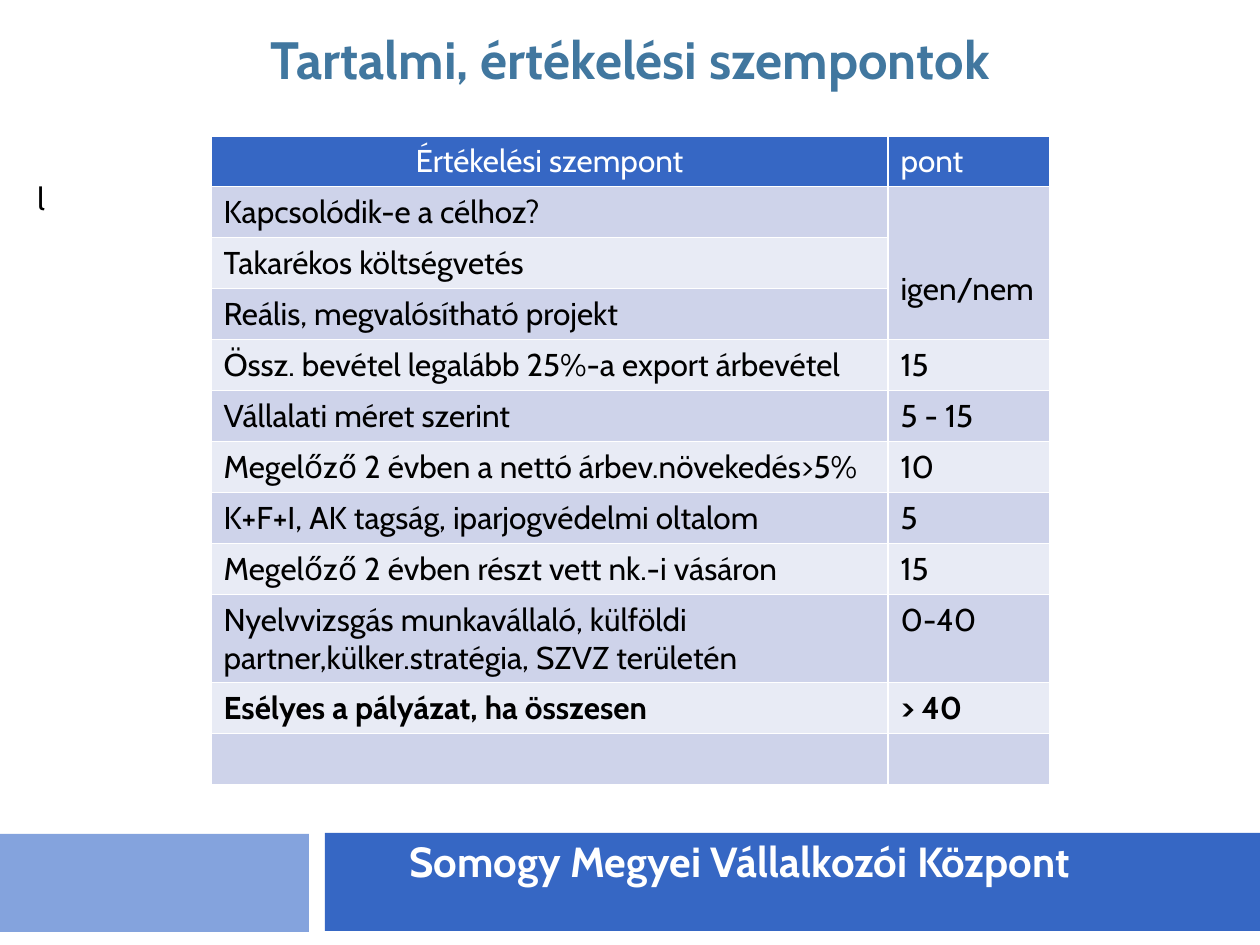
from dataclasses import dataclass
from typing import NamedTuple

from lxml.etree import SubElement
from pptx import Presentation
from pptx.dml.color import RGBColor
from pptx.enum.shapes import MSO_SHAPE
from pptx.enum.text import MSO_ANCHOR, MSO_AUTO_SIZE, PP_ALIGN
from pptx.oxml.ns import qn
from pptx.util import Emu, Pt

PX_PER_INCH = 126


@dataclass(frozen=True)
class Theme:
    font: str = "Cabin"
    title: str = "41779F"
    primary: str = "3667C4"
    accent: str = "84A3DD"
    bands: tuple = ("CED3EA", "E8EBF5")
    light: str = "FFFFFF"
    dark: str = "000000"
    title_size: int = 30
    footer_size: int = 24
    body_size: int = 18
    border: int = 1


class Area(NamedTuple):
    left: int
    top: int
    width: int
    height: int


class Criterion(NamedTuple):
    name: str
    points: str
    height: int = 51
    bold: bool = False


THEME = Theme()
HEADER = Criterion("Értékelési szempont", "pont", 50)
CRITERIA = [
    Criterion("Kapcsolódik-e a célhoz?", "igen/nem"),
    Criterion("Takarékos költségvetés", ""),
    Criterion("Reális, megvalósítható projekt", ""),
    Criterion("Össz. bevétel legalább 25%-a export árbevétel", "15"),
    Criterion("Vállalati méret szerint", "5 - 15"),
    Criterion("Megelőző 2 évben a nettó árbev.növekedés>5%", "10"),
    Criterion("K+F+I, AK tagság, iparjogvédelmi oltalom", "5"),
    Criterion("Megelőző 2 évben részt vett nk.-i vásáron", "15"),
    Criterion("Nyelvvizsgás munkavállaló, külföldi "
              "partner,külker.stratégia, SZVZ területén", "0-40", 88),
    Criterion("Esélyes a pályázat, ha összesen", "> 40", bold=True),
    Criterion("", ""),
]
COLUMN_WIDTHS = (677, 162)
BARS = [
    (Area(-1, 834, 310, 98), THEME.accent),
    (Area(325, 833, 935, 98), THEME.primary),
]


def px(value: int) -> Emu:
    return Emu(round(value * 914400 / PX_PER_INCH))


def place(shape, area: Area) -> None:
    for name, value in area._asdict().items():
        setattr(shape, name, px(value))


def write(frame, text: str, color: str, size: int, bold: bool = False,
          align=PP_ALIGN.LEFT) -> None:
    para = frame.paragraphs[0]
    para.alignment = align
    # An empty cell keeps its type size on the paragraph end
    span = para.add_run() if text else para
    span.text = text
    formats = {"name": THEME.font, "size": Pt(size), "bold": bold}
    for name, value in formats.items():
        setattr(span.font, name, value)
    span.font.color.rgb = RGBColor.from_string(color)


def add_bar(page, area: Area, color: str) -> None:
    bar = page.shapes.add_shape(MSO_SHAPE.RECTANGLE, *map(px, area))
    bar.shadow.inherit = False
    bar.fill.solid()
    bar.fill.fore_color.rgb = RGBColor.from_string(color)
    bar.line.fill.background()


def add_label(page, area: Area, text: str, color: str, size: int,
              bold: bool = False) -> None:
    box = page.shapes.add_textbox(*map(px, area))
    box.text_frame.word_wrap = True
    write(box.text_frame, text, color, size, bold)


def style_cell(cell, fill: str) -> None:
    properties = cell._tc.get_or_add_tcPr()
    for side in ("a:lnL", "a:lnR", "a:lnT", "a:lnB"):
        line = SubElement(properties, qn(side), w=str(Pt(THEME.border)))
        paint = SubElement(line, qn("a:solidFill"))
        SubElement(paint, qn("a:srgbClr"), val=THEME.light)
    cell.fill.solid()
    cell.fill.fore_color.rgb = RGBColor.from_string(fill)


def add_criteria_table(page, left: int, top: int) -> None:
    rows = [HEADER, *CRITERIA]
    area = Area(left, top, sum(COLUMN_WIDTHS), sum(row.height for row in rows))
    table = page.shapes.add_table(len(rows), len(COLUMN_WIDTHS), *map(px, area)).table
    table.first_row = table.horz_banding = False
    for column, width in zip(table.columns, COLUMN_WIDTHS):
        column.width = px(width)

    for index, row in enumerate(rows):
        is_header = index == 0
        fill = THEME.primary if is_header else THEME.bands[(index - 1) % 2]
        color = THEME.light if is_header else THEME.dark
        table.rows[index].height = px(row.height)
        for column, text in enumerate((row.name, row.points)):
            cell = table.cell(index, column)
            style_cell(cell, fill)
            centered = is_header and column == 0
            write(cell.text_frame, text, color, THEME.body_size, row.bold,
                  PP_ALIGN.CENTER if centered else PP_ALIGN.LEFT)

    # One yes/no answer covers the first three criteria
    answer = table.cell(1, 1)
    answer.merge(table.cell(3, 1))
    answer.vertical_anchor = MSO_ANCHOR.BOTTOM
    answer.margin_bottom = px(31)


def main() -> None:
    deck = Presentation()
    deck.slide_width, deck.slide_height = px(1260), px(945)
    page = deck.slides.add_slide(deck.slide_layouts[5])

    # Footer bars
    for area, color in BARS:
        add_bar(page, area, color)

    # Title
    title = page.shapes.title
    place(title, Area(0, -43, 1260, 139))
    frame_formats = {"word_wrap": True, "auto_size": MSO_AUTO_SIZE.NONE,
                     "vertical_anchor": MSO_ANCHOR.BOTTOM}
    for name, value in frame_formats.items():
        setattr(title.text_frame, name, value)
    write(title.text_frame, "Tartalmi, értékelési szempontok", THEME.title,
          THEME.title_size, True, PP_ALIGN.CENTER)

    # Footer name and side text
    add_label(page, Area(397, 829, 863, 63), "Somogy Megyei Vállalkozói Központ",
              THEME.light, THEME.footer_size, True)
    add_label(page, Area(25, 173, 180, 52), "l", THEME.dark, THEME.body_size)

    # Scoring table
    add_criteria_table(page, 211, 136)

    deck.save("out.pptx")


if __name__ == "__main__":
    main()
